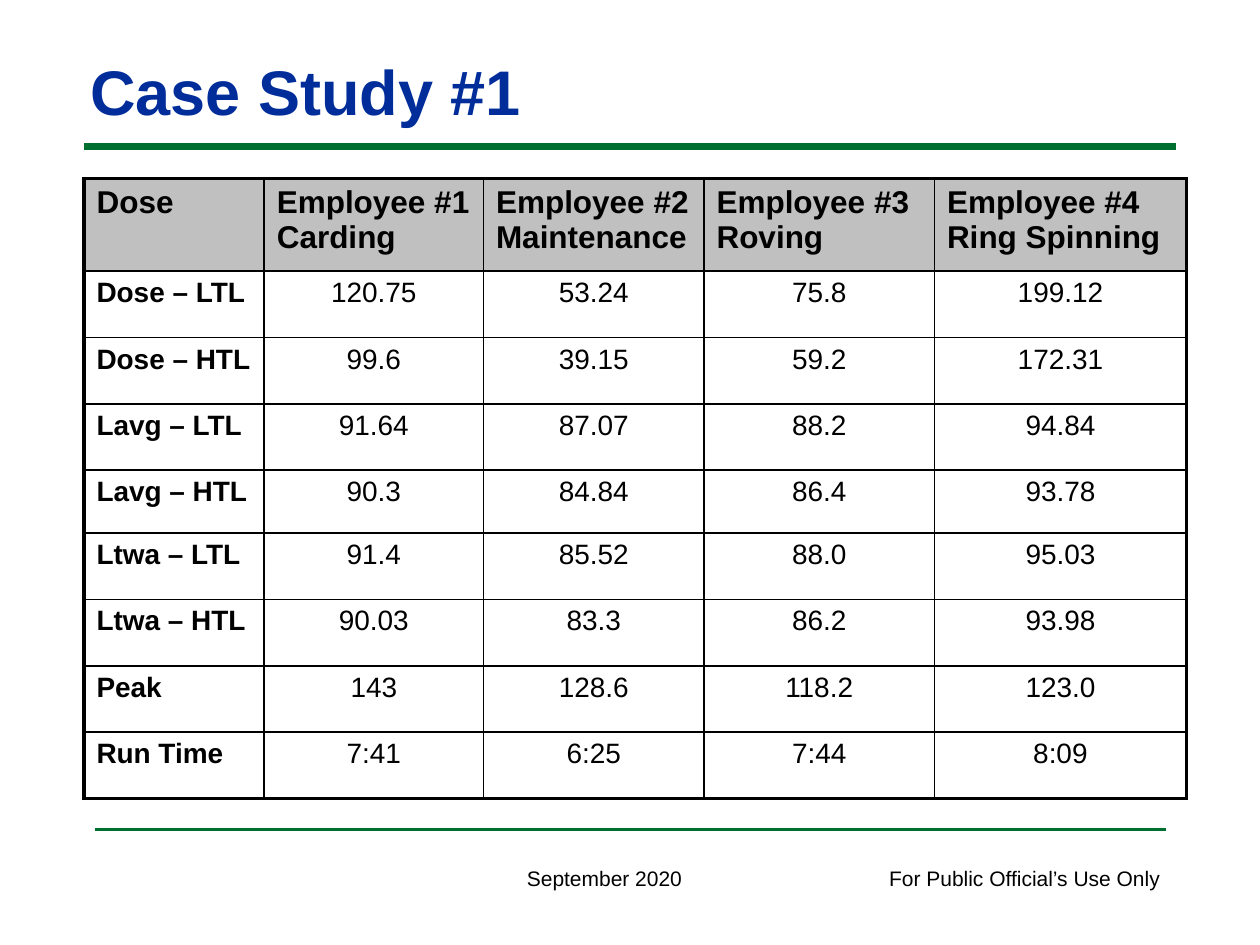
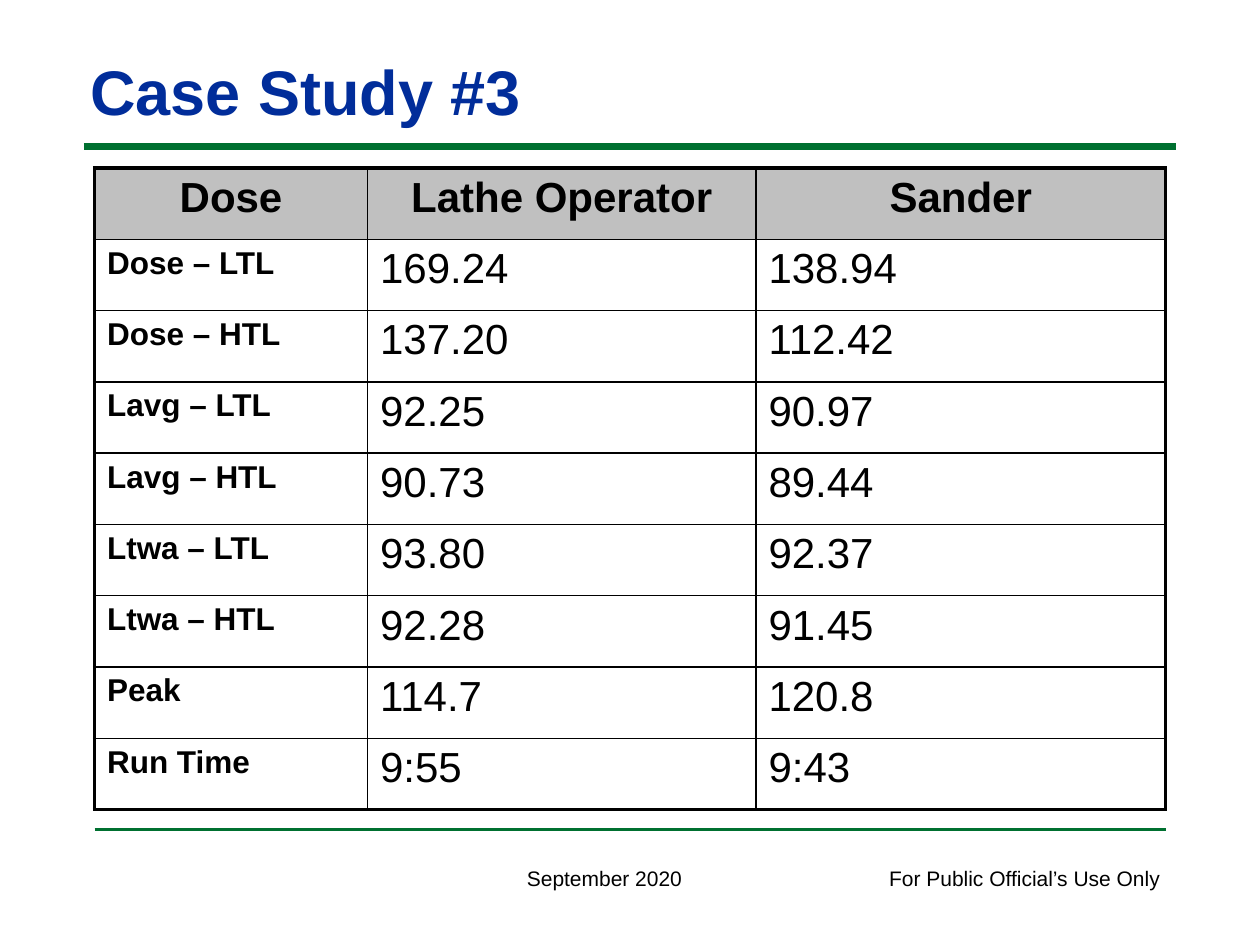
from lxml.etree import SubElement
from pptx import Presentation
from pptx.dml.color import RGBColor
from pptx.enum.shapes import MSO_CONNECTOR
from pptx.enum.text import MSO_ANCHOR, MSO_AUTO_SIZE, PP_ALIGN
from pptx.oxml.ns import qn
from pptx.util import Pt

COLORS = {"title": "012D9A", "rule": "007030", "text": "000000",
          "border": "000000", "header": "C0C0C0"}
FONT = "Arial"
THIN, THICK = 1, 2.25
RULES = [(48, 672, 84, 4), (54, 666, 474, 2)]
FOOTERS = [("For Public Official’s Use Only", 501, 171),
           ("September 2020", 294, 104)]
MEASURES = ["Dose – LTL", "Dose – HTL", "Lavg – LTL", "Lavg – HTL",
            "Ltwa – LTL", "Ltwa – HTL", "Peak", "Run Time"]

CASE_1 = {
    "title": "Case Study #1",
    "left": 48, "top": 102,
    "widths": [103, 125.3, 126, 131.7, 144],
    "heights": [53] + [37.9] * 3 + [36] + [37.9] * 4,
    "header": ["Dose", "Employee #1\nCarding", "Employee #2\nMaintenance",
               "Employee #3\nRoving", "Employee #4\nRing Spinning"],
    "values": [
        ["120.75", "53.24", "75.8", "199.12"],
        ["99.6", "39.15", "59.2", "172.31"],
        ["91.64", "87.07", "88.2", "94.84"],
        ["90.3", "84.84", "86.4", "93.78"],
        ["91.4", "85.52", "88.0", "95.03"],
        ["90.03", "83.3", "86.2", "93.98"],
        ["143", "128.6", "118.2", "123.0"],
        ["7:41", "6:25", "7:44", "8:09"],
    ],
    "header_style": (18, True, PP_ALIGN.LEFT),
    "label_style": (16, True, PP_ALIGN.LEFT),
    "value_style": (16, False, PP_ALIGN.CENTER),
}
CASE_3 = {
    "title": "Case Study #3",
    "left": 54, "top": 96,
    "widths": [156, 222, 234],
    "heights": [40.75] * 9,
    "header": ["Dose", "Lathe Operator", "Sander"],
    "values": [
        ["169.24", "138.94"],
        ["137.20", "112.42"],
        ["92.25", "90.97"],
        ["90.73", "89.44"],
        ["93.80", "92.37"],
        ["92.28", "91.45"],
        ["114.7", "120.8"],
        ["9:55", "9:43"],
    ],
    "header_style": (24, True, PP_ALIGN.CENTER),
    "label_style": (18, True, PP_ALIGN.LEFT),
    "value_style": (24, False, PP_ALIGN.LEFT),
}


def rgb(name):
    return RGBColor.from_string(COLORS[name])


def set_attrs(obj, values):
    for name, value in values.items():
        setattr(obj, name, value)


def write(tf, text, size, bold=False, align=PP_ALIGN.LEFT, color="text"):
    tf.text = text
    for p in tf.paragraphs:
        p.alignment = align
        for r in p.runs:
            set_attrs(r.font, {"name": FONT, "size": Pt(size), "bold": bold})
            r.font.color.rgb = rgb(color)


def add_rule(slide, x1, x2, y, weight):
    line = slide.shapes.add_connector(
        MSO_CONNECTOR.STRAIGHT, Pt(x1), Pt(y), Pt(x2), Pt(y))
    line.line.color.rgb = rgb("rule")
    line.line.width = Pt(weight)
    SubElement(line._element.spPr, qn("a:effectLst"))


def add_footer(slide, text, left, width):
    sp = slide.shapes.add_textbox(Pt(left), Pt(491), Pt(width), Pt(21.6))
    sp.text_frame.word_wrap = False
    write(sp.text_frame, text, 12)


def set_title(slide, text):
    sp = slide.shapes.title
    set_attrs(sp, {"left": Pt(48), "top": Pt(30),
                   "width": Pt(648), "height": Pt(43.2)})
    tf = sp.text_frame
    set_attrs(tf, {"margin_left": Pt(3.6), "margin_right": Pt(3.6),
                   "margin_top": 0, "margin_bottom": 0, "word_wrap": True,
                   "auto_size": MSO_AUTO_SIZE.NONE,
                   "vertical_anchor": MSO_ANCHOR.BOTTOM})
    write(tf, text, 36, True, color="title")


def set_borders(cell, outer):
    tc_pr = cell._tc.get_or_add_tcPr()
    for side, is_outer in outer.items():
        weight = THICK if is_outer else THIN
        ln = SubElement(tc_pr, qn(f"a:ln{side}"), w=str(Pt(weight)))
        fill = SubElement(ln, qn("a:solidFill"))
        SubElement(fill, qn("a:srgbClr"), val=COLORS["border"])


def add_dose_table(slide, case):
    widths, heights = case["widths"], case["heights"]
    rows = [case["header"]]
    rows += [[label, *row] for label, row in zip(MEASURES, case["values"])]
    table = slide.shapes.add_table(
        len(rows), len(widths), Pt(case["left"]), Pt(case["top"]),
        Pt(sum(widths)), Pt(sum(heights))).table
    set_attrs(table, {"first_row": False, "horz_banding": False})
    for column, width in zip(table.columns, widths):
        column.width = Pt(width)
    for row, height in zip(table.rows, heights):
        row.height = Pt(height)
    for i, row in enumerate(rows):
        for j, text in enumerate(row):
            cell = table.cell(i, j)
            set_borders(cell, {"L": j == 0, "R": j == len(widths) - 1,
                               "T": i == 0, "B": i == len(rows) - 1})
            if i == 0:
                style = "header_style"
                cell.fill.solid()
                cell.fill.fore_color.rgb = rgb("header")
            else:
                style = "value_style" if j else "label_style"
                cell.fill.background()
            write(cell.text_frame, text, *case[style])


def add_case_slide(prs, case):
    slide = prs.slides.add_slide(prs.slide_layouts[5])
    for rule in RULES:
        add_rule(slide, *rule)
    for footer in FOOTERS:
        add_footer(slide, *footer)
    set_title(slide, case["title"])
    add_dose_table(slide, case)


def main():
    prs = Presentation()
    set_attrs(prs, {"slide_width": Pt(720), "slide_height": Pt(540)})
    for case in (CASE_1, CASE_3):
        add_case_slide(prs, case)
    prs.save("out.pptx")


if __name__ == "__main__":
    main()
